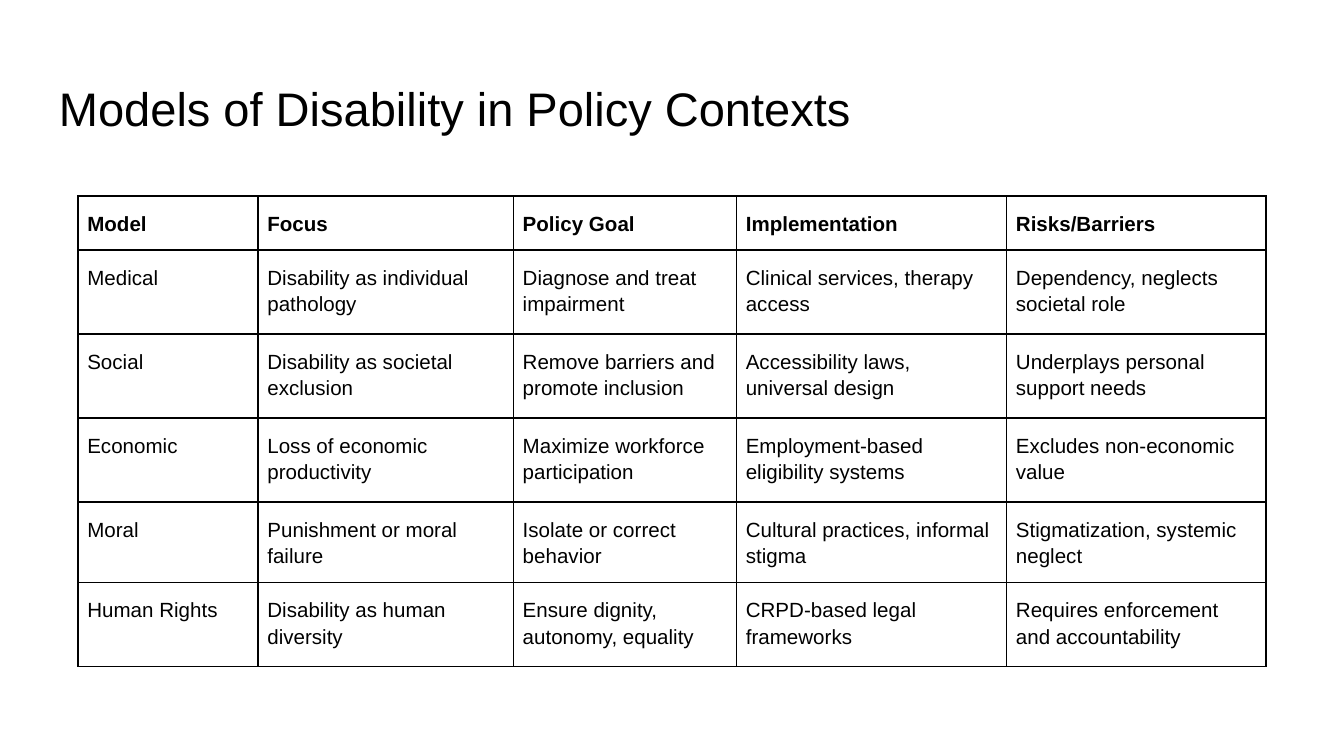
"""Build a slide with a table comparing models of disability in policy."""
from lxml.etree import SubElement
from pptx import Presentation
from pptx.dml.color import RGBColor
from pptx.enum.text import MSO_VERTICAL_ANCHOR as Anchor
from pptx.oxml.ns import qn
from pptx.util import Inches, Pt

COLORS = {"text": "000000", "border": "000000"}
FONT = "Arial"
COL_WIDTHS = [1.34, 1.9, 1.66, 2.01, 1.93]
TALL_ROW = 5 / 8
ROW_HEIGHTS = [0.4, TALL_ROW, TALL_ROW, TALL_ROW, 0.6, TALL_ROW]
ROWS = [
    ["Model", "Focus", "Policy Goal", "Implementation", "Risks/Barriers"],
    ["Medical", "Disability as individual pathology", "Diagnose and treat impairment",
     "Clinical services, therapy access", "Dependency, neglects societal role"],
    ["Social", "Disability as societal exclusion", "Remove barriers and promote inclusion",
     "Accessibility laws, universal design", "Underplays personal support needs"],
    ["Economic", "Loss of economic productivity", "Maximize workforce participation",
     "Employment-based eligibility systems", "Excludes non-economic value"],
    ["Moral", "Punishment or moral failure", "Isolate or correct behavior",
     "Cultural practices, informal stigma", "Stigmatization, systemic neglect"],
    ["Human Rights", "Disability as human diversity", "Ensure dignity, autonomy, equality",
     "CRPD-based legal frameworks", "Requires enforcement and accountability"],
]


def format_runs(p, size, bold=False):
    for r in p.runs:
        r.font.name = FONT
        r.font.size = Pt(size)
        r.font.bold = bold
        r.font.color.rgb = RGBColor.from_string(COLORS["text"])


def add_title(s, text):
    sp = s.shapes.add_textbox(Inches(0.34), Inches(0.49), Inches(9.32), Inches(0.63))
    tf = sp.text_frame
    tf.word_wrap = True
    tf.vertical_anchor = Anchor.TOP
    tf.margin_left = tf.margin_right = tf.margin_top = tf.margin_bottom = Inches(0.1)
    tf.text = text
    format_runs(tf.paragraphs[0], 25.2)


def set_borders(cell):
    tc_pr = cell._tc.get_or_add_tcPr()
    for i, side in enumerate(("a:lnL", "a:lnR", "a:lnT", "a:lnB")):
        ln = SubElement(tc_pr, qn(side), w=str(Pt(1)))
        fill = SubElement(ln, qn("a:solidFill"))
        SubElement(fill, qn("a:srgbClr"), val=COLORS["border"])
        tc_pr.insert(i, ln)


def fill_cell(cell, text, bold):
    cell.text_frame.text = text
    cell.margin_left = cell.margin_right = Inches(0.07)
    cell.margin_top = cell.margin_bottom = Inches(0.1)
    cell.vertical_anchor = Anchor.TOP
    cell.fill.background()
    set_borders(cell)
    p = cell.text_frame.paragraphs[0]
    p.line_spacing = 1.15
    format_runs(p, 11, bold)


def add_model_table(s):
    table = s.shapes.add_table(
        len(ROWS), len(COL_WIDTHS), Inches(0.58), Inches(1.46),
        Inches(sum(COL_WIDTHS)), Inches(sum(ROW_HEIGHTS))).table
    table.horz_banding = False
    for col, width in zip(table.columns, COL_WIDTHS):
        col.width = Inches(width)
    for i, (row, height) in enumerate(zip(table.rows, ROW_HEIGHTS)):
        row.height = Inches(height)
        for cell, text in zip(row.cells, ROWS[i]):
            fill_cell(cell, text, bold=i == 0)


def main():
    prs = Presentation()
    prs.slide_width = Inches(10)
    prs.slide_height = Inches(10 * 9 / 16)
    s = prs.slides.add_slide(prs.slide_layouts[6])
    add_model_table(s)
    add_title(s, "Models of Disability in Policy Contexts")
    prs.save("out.pptx")


if __name__ == "__main__":
    main()
